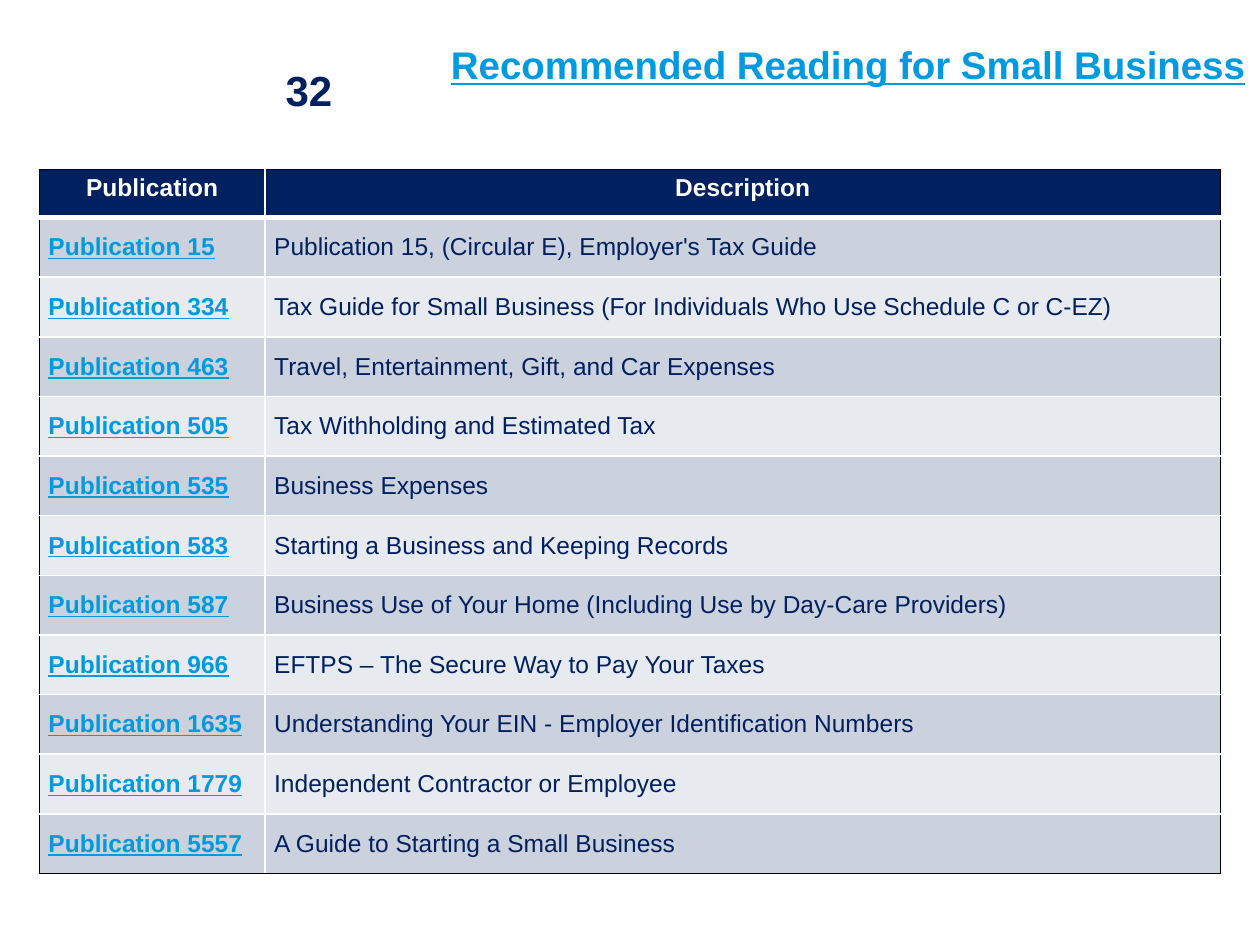
from lxml.etree import SubElement
from pptx import Presentation
from pptx.dml.color import RGBColor
from pptx.enum.text import MSO_ANCHOR, MSO_AUTO_SIZE, PP_ALIGN
from pptx.oxml.ns import qn
from pptx.util import Pt

COLORS = {
    "navy": "002060",
    "link": "009BDE",
    "white": "FFFFFF",
    "black": "000000",
    "odd_row": "CCD1DE",
    "even_row": "E7EAEF",
}

PUBLICATIONS = [
    ("Publication 15", "Publication 15, (Circular E), Employer's Tax Guide"),
    ("Publication 334", "Tax Guide for Small Business (For Individuals Who Use Schedule C or C-EZ)"),
    ("Publication 463", "Travel, Entertainment, Gift, and Car Expenses"),
    ("Publication 505", "Tax Withholding and Estimated Tax"),
    ("Publication 535", "Business Expenses"),
    ("Publication 583", "Starting a Business and Keeping Records"),
    ("Publication 587", "Business Use of Your Home (Including Use by Day-Care Providers)"),
    ("Publication 966", "EFTPS – The Secure Way to Pay Your Taxes"),
    ("Publication 1635", "Understanding Your EIN - Employer Identification Numbers"),
    ("Publication 1779", "Independent Contractor or Employee"),
    ("Publication 5557", "A Guide to Starting a Small Business"),
]


class SlideBuilder:
    """Adds styled elements to one slide; all lengths are in points."""

    font_name = "Arial"

    def __init__(self, slide):
        self.slide = slide

    def set_text(self, frame, text, size, color, bold=False, underline=False,
                 align=PP_ALIGN.LEFT, line_spacing=None):
        frame.text = text
        paragraph = frame.paragraphs[0]
        paragraph.alignment = align
        if line_spacing:
            paragraph.line_spacing = line_spacing
        font = paragraph.runs[0].font
        font.name, font.size = self.font_name, Pt(size)
        font.bold, font.underline = bold, underline
        font.color.rgb = RGBColor.from_string(COLORS[color])

    def title(self, text, left, top, width, height):
        title = self.slide.shapes.title
        title.left, title.top, title.width, title.height = map(Pt, (left, top, width, height))
        frame = title.text_frame
        frame.auto_size = MSO_AUTO_SIZE.NONE
        frame.vertical_anchor = MSO_ANCHOR.MIDDLE
        self.set_text(frame, text, 22, "link", bold=True, underline=True, line_spacing=0.9)

    def page_number(self, text, left, top, width, height):
        box = self.slide.shapes.add_textbox(*map(Pt, (left, top, width, height)))
        frame = box.text_frame
        frame.word_wrap = True
        frame.vertical_anchor = MSO_ANCHOR.BOTTOM
        self.set_text(frame, text, 24, "navy", bold=True, align=PP_ALIGN.CENTER, line_spacing=1.69)

    def borders(self, cell, edges):
        """Draw cell edges, given as (color, width) in the order left, right, top, bottom."""
        properties = cell._tc.get_or_add_tcPr()
        for side, (color, width) in zip("LRTB", edges):
            line = SubElement(properties, qn(f"a:ln{side}"), w=str(Pt(width)))
            fill = SubElement(line, qn("a:solidFill"))
            SubElement(fill, qn("a:srgbClr"), val=COLORS[color])

    def table(self, rows, left, top, column_widths, header_height, row_height):
        height = header_height + row_height * (len(rows) - 1)
        frame = self.slide.shapes.add_table(
            len(rows), len(column_widths), Pt(left), Pt(top), Pt(sum(column_widths)), Pt(height))
        table = frame.table
        table.first_row = table.horz_banding = False
        for column, width in zip(table.columns, column_widths):
            column.width = Pt(width)
        last_row, last_column = len(rows) - 1, len(column_widths) - 1
        outer, inner, header_rule = ("black", 1), ("white", 1), ("white", 3)

        for row_index, texts in enumerate(rows):
            is_header = row_index == 0
            table.rows[row_index].height = Pt(header_height if is_header else row_height)
            row_color = "navy" if is_header else ("odd_row" if row_index % 2 else "even_row")
            top_edge = {0: outer, 1: header_rule}.get(row_index, inner)
            bottom_edge = {0: header_rule, last_row: outer}.get(row_index, inner)
            for column_index, text in enumerate(texts):
                cell = table.cell(row_index, column_index)
                cell.margin_left = cell.margin_right = Pt(5.2)
                cell.margin_top = cell.margin_bottom = Pt(2.8)
                self.borders(cell, (
                    outer if column_index == 0 else inner,
                    outer if column_index == last_column else inner,
                    top_edge, bottom_edge))
                cell.fill.solid()
                cell.fill.fore_color.rgb = RGBColor.from_string(COLORS[row_color])
                if is_header:
                    self.set_text(cell.text_frame, text, 14, "white", bold=True, align=PP_ALIGN.CENTER)
                else:
                    cell.vertical_anchor = MSO_ANCHOR.MIDDLE
                    is_link = column_index == 0
                    self.set_text(cell.text_frame, text, 14, "link" if is_link else "navy",
                                  bold=is_link, underline=is_link)


def main():
    deck = Presentation()
    deck.slide_width, deck.slide_height = Pt(720), Pt(540)
    builder = SlideBuilder(deck.slides.add_slide(deck.slide_layouts[5]))
    builder.title("Recommended Reading for Small Business", 250.5, 11.5, 486, 54)
    builder.table([("Publication", "Description")] + PUBLICATIONS, 22.5, 97,
                  column_widths=(129, 546), header_height=27.3, row_height=34.1)
    builder.page_number("32", 152.5, 40.3, 48.2, 28.8)
    deck.save("out.pptx")


if __name__ == "__main__":
    main()
